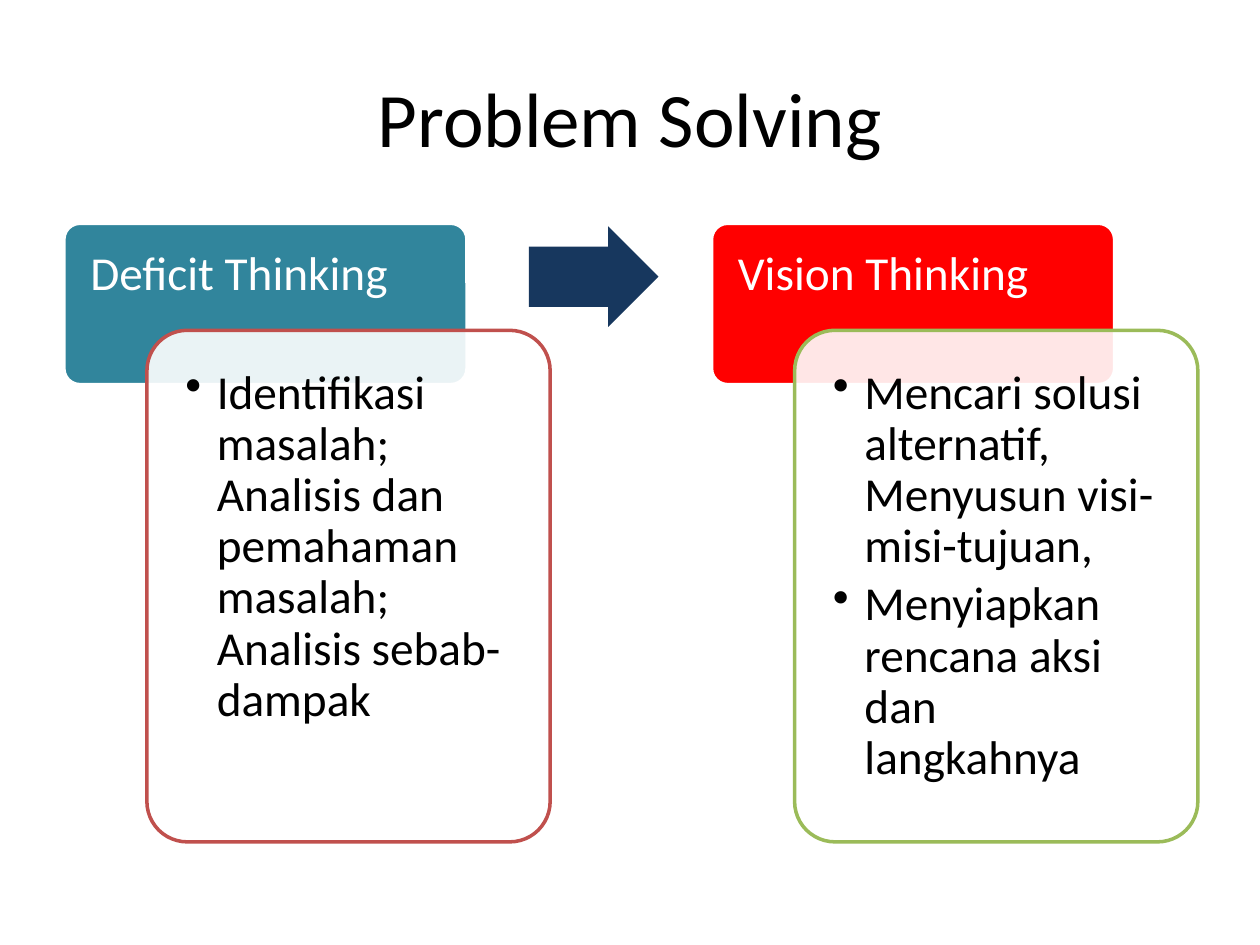
from lxml import etree
from pptx import Presentation
from pptx.dml.color import RGBColor
from pptx.enum.shapes import MSO_SHAPE
from pptx.enum.text import MSO_ANCHOR, PP_ALIGN
from pptx.oxml.ns import qn
from pptx.util import Pt

ROUND, ARROW = MSO_SHAPE.ROUNDED_RECTANGLE, MSO_SHAPE.RIGHT_ARROW
TOP, MIDDLE = MSO_ANCHOR.TOP, MSO_ANCHOR.MIDDLE
LEFT, CENTER = PP_ALIGN.LEFT, PP_ALIGN.CENTER

BLACK = RGBColor(0x00, 0x00, 0x00)
WHITE = RGBColor(0xFF, 0xFF, 0xFF)
TEAL = RGBColor(0x31, 0x85, 0x9C)
RED = RGBColor(0xFF, 0x00, 0x00)
BRICK = RGBColor(0xC0, 0x50, 0x4D)
GREEN = RGBColor(0x9B, 0xBB, 0x59)
NAVY = RGBColor(0x17, 0x37, 0x5E)

FONT = "Calibri"
INSET = 15.1
WIDTH = 230.4
STEP = 370.1
STAGES = [
    ("Deficit Thinking", TEAL, BRICK,
     ["Identifikasi masalah; Analisis dan pemahaman masalah; "
      "Analisis sebab-dampak"]),
    ("Vision Thinking", RED, GREEN,
     ["Mencari solusi alternatif, Menyusun visi-misi-tujuan,",
      "Menyiapkan rencana aksi dan langkahnya"]),
]


def assign(target, values):
    for name, value in values.items():
        setattr(target, name, value)


def add_form(shapes, kind, box, fill, line=None, adjust=(0.1,)):
    form = shapes.add_shape(kind, *map(Pt, box))
    form.shadow.inherit = False
    for i, value in enumerate(adjust):
        form.adjustments[i] = value
    form.fill.solid()
    form.fill.fore_color.rgb = fill
    if line is None:
        form.line.fill.background()
    else:
        form.line.color.rgb = line
        form.line.width = Pt(2)
    return form


def fade(form, percent):
    """Set the opacity of a solid fill."""
    color = form.fill._xPr.find(qn("a:solidFill"))[0]
    etree.SubElement(color, qn("a:alpha"), val=str(percent * 1000))


def add_bullet(para):
    props = para._p.get_or_add_pPr()
    props.set("marL", str(Pt(18)))
    props.set("indent", str(-Pt(18)))
    etree.SubElement(props, qn("a:buChar"), char="•")


def add_text(shapes, box, lines, color, after, bottom=INSET, bullets=False):
    frame = shapes.add_textbox(*map(Pt, box)).text_frame
    assign(frame, {
        "word_wrap": True, "vertical_anchor": TOP,
        "margin_left": Pt(INSET), "margin_right": Pt(INSET),
        "margin_top": Pt(INSET), "margin_bottom": Pt(bottom),
    })
    for i, line in enumerate(lines):
        para = frame.add_paragraph() if i else frame.paragraphs[0]
        assign(para, {"alignment": LEFT, "line_spacing": 0.9,
                      "space_after": Pt(after), "level": int(bullets)})
        if bullets:
            add_bullet(para)
        run = para.add_run()
        run.text = line
        assign(run.font, {"name": FONT, "size": Pt(27)})
        run.font.color.rgb = color


def add_title(slide, text, box):
    title = slide.shapes.title
    sides = ("left", "top", "width", "height")
    assign(title, dict(zip(sides, map(Pt, box))))
    title.text_frame.text = text
    title.text_frame.vertical_anchor = MIDDLE
    para = title.text_frame.paragraphs[0]
    para.alignment = CENTER
    assign(para.runs[0].font, {"name": FONT, "size": Pt(44)})
    para.runs[0].font.color.rgb = BLACK


def add_stage(shapes, left, top, stage):
    """Place a heading block with its panel overlapping below and right."""
    head, fill, edge, points = stage
    add_form(shapes, ROUND, (left, top, WIDTH, 92.2), fill, WHITE)
    add_text(shapes, (left, top, WIDTH, 61.2), [head], WHITE, 9.5, bottom=8)
    x, y = left + 47.5, top + 61.2
    panel = add_form(shapes, ROUND, (x, y, WIDTH, 292.3), WHITE, edge)
    fade(panel, 90)
    pad = 6.8
    inner = (x + pad, y + pad, WIDTH - 2 * pad, 292.3 - 2 * pad)
    add_text(shapes, inner, points, BLACK, 4, bullets=True)


def add_flow(slide, left, top):
    shapes = slide.shapes.add_group_shape().shapes
    for i, stage in enumerate(STAGES):
        if i:
            box = (left + i * STEP - 104.4, top + 1.8, 74.1, 57.4)
            add_form(shapes, ARROW, box, NAVY, adjust=(0.6, 0.5))
        add_stage(shapes, left + i * STEP, top, stage)


def main():
    deck = Presentation()
    deck.slide_width, deck.slide_height = Pt(720), Pt(540)
    slide = deck.slides.add_slide(deck.slide_layouts[5])
    add_title(slide, "Problem Solving", (36, 21.6, 648, 90))
    add_flow(slide, 36.5, 127.6)
    deck.save("out.pptx")


if __name__ == "__main__":
    main()
